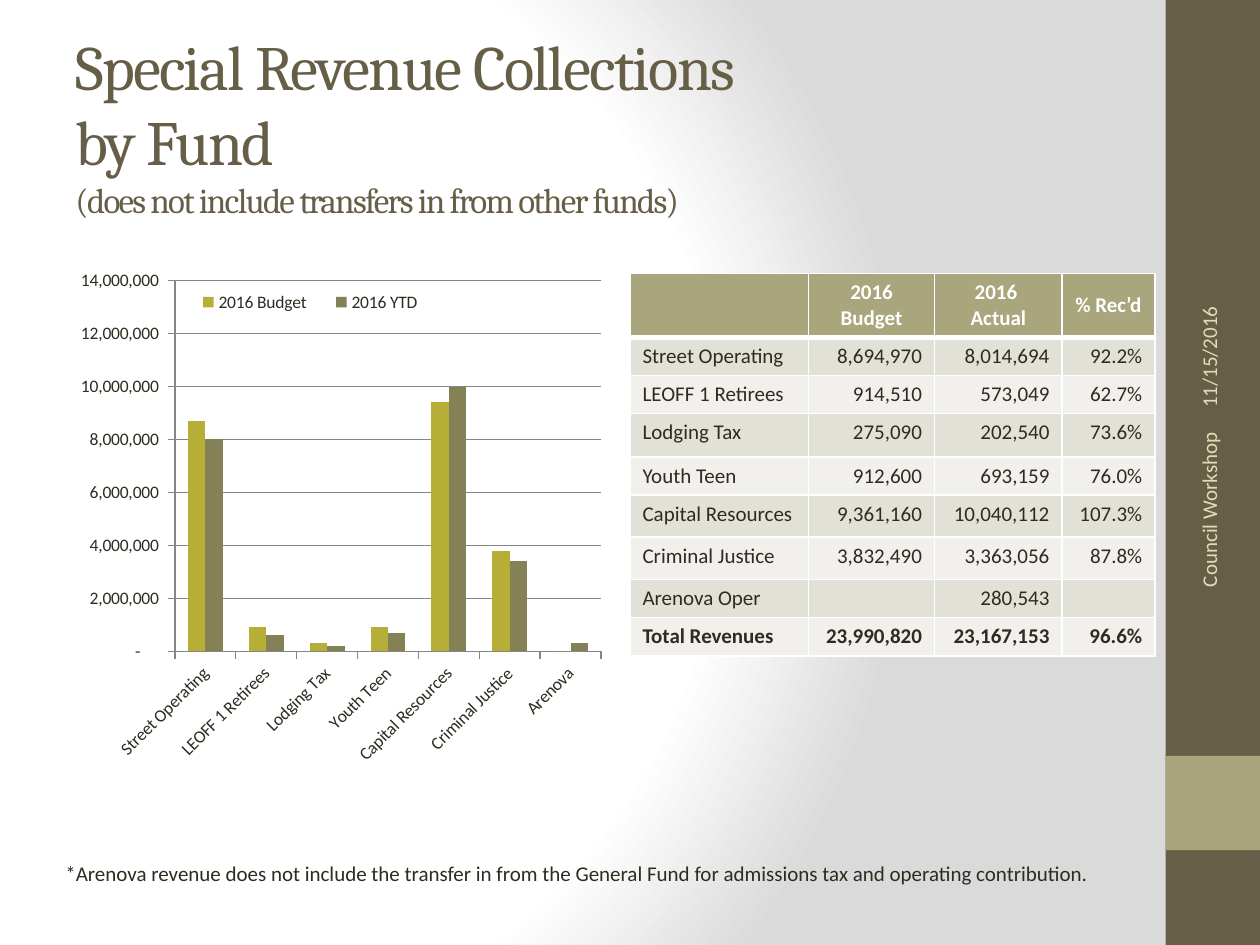
from dataclasses import dataclass

from pptx import Presentation
from pptx.chart.data import CategoryChartData
from pptx.dml.color import RGBColor
from pptx.enum.chart import XL_CHART_TYPE, XL_LEGEND_POSITION, XL_TICK_MARK
from pptx.enum.shapes import MSO_SHAPE
from pptx.enum.text import MSO_ANCHOR, PP_ALIGN
from pptx.oxml import parse_xml
from pptx.oxml.ns import nsdecls
from pptx.util import Cm, Pt

LEFT, CENTER, RIGHT = PP_ALIGN.LEFT, PP_ALIGN.CENTER, PP_ALIGN.RIGHT
TOP, MIDDLE = MSO_ANCHOR.TOP, MSO_ANCHOR.MIDDLE
TICK_OUTSIDE = XL_TICK_MARK.OUTSIDE


@dataclass(frozen=True)
class Theme:
    heading_font: str = "Cambria"
    body_font: str = "Calibri"
    title_size: int = 36
    subtitle_size: int = 20
    body_size: int = 12
    chart_size: int = 10
    brown: str = "675E47"
    olive: str = "A9A57C"
    sand: str = "DFDCB7"
    ink: str = "2F2B20"
    white: str = "FFFFFF"
    gray: str = "DADADA"
    grid: str = "868686"
    bands: tuple = ("E2E1D7", "F1F0EC")
    series: tuple = ("B7AE38", "858157")


THEME = Theme()

TITLE_LINES = [("Special Revenue Collections", THEME.title_size),
               ("by Fund", THEME.title_size),
               ("(does not include transfers in from other funds)", THEME.subtitle_size)]
NOTE = ("*Arenova revenue does not include the transfer in from the General Fund "
        "for admissions tax and operating contribution.")
# text, alignment, left, top, width (cm)
SIDE_LABELS = [("11/15/2016", LEFT, 20.98, 4.57, 6.78),
               ("Council Workshop", RIGHT, 21.08, 11.25, 6.58)]

HEADER = [[], ["2016 Budget"], ["2016 ", "Actual"], ["% Rec’d"]]
# table label, budget, actual, percent received
FUNDS = [
    ("Street Operating", 8694970, 8014694, "92.2%"),
    ("LEOFF 1 Retirees", 914510, 573049, "62.7%"),
    ("Lodging Tax", 275090, 202540, "73.6%"),
    ("Youth Teen", 912600, 693159, "76.0%"),
    ("Capital Resources", 9361160, 10040112, "107.3%"),
    ("Criminal Justice", 3832490, 3363056, "87.8%"),
    ("Arenova Oper", 0, 280543, ""),
]
TOTAL = ("Total Revenues", 23990820, 23167153, "96.6%")
COLUMN_WIDTHS = [3.6, 2.54, 2.57, 1.87]
ROW_HEIGHTS = [1.29, 0.77, 0.77, 0.87, 0.77, 0.85, 0.85, 0.77, 0.77]
SERIES_NAMES = ["2016 Budget", "2016 YTD"]
NUMBER_FORMAT = '_(* #,##0_);_(* \\(#,##0\\);_(* "-"??_);_('


def rgb(color):
    return RGBColor.from_string(color)


def box(left, top, width, height):
    return Cm(left), Cm(top), Cm(width), Cm(height)


def style_font(font, size, color, name=THEME.body_font, bold=False):
    font.size, font.name, font.bold = Pt(size), name, bold
    font.color.rgb = rgb(color)


def add_run(paragraph, text, *style, **options):
    run = paragraph.add_run()
    run.text = text
    style_font(run.font, *style, **options)
    return run


def add_text_box(slide, position, anchor=TOP):
    shape = slide.shapes.add_textbox(*box(*position))
    shape.text_frame.word_wrap = True
    shape.text_frame.vertical_anchor = anchor
    return shape


def set_background(slide):
    stops = "".join(
        f'<a:gs pos="{percent * 1000}"><a:srgbClr val="{color}"/></a:gs>'
        for percent, color in [(0, THEME.white), (75, THEME.white), (100, THEME.gray)])
    slide.element.cSld.insert(0, parse_xml(
        f'<p:bg {nsdecls("p", "a")}><p:bgPr><a:gradFill rotWithShape="1">'
        f'<a:gsLst>{stops}</a:gsLst><a:path path="circle">'
        '<a:fillToRect l="20000" t="50000" r="100000" b="50000"/></a:path>'
        '</a:gradFill><a:effectLst/></p:bgPr></p:bg>'))


def add_sidebar(slide):
    for top, height, color in [(0, 19.05, THEME.brown), (15.24, 1.9, THEME.olive)]:
        shape = slide.shapes.add_shape(MSO_SHAPE.RECTANGLE, *box(23.5, top, 1.9, height))
        shape.shadow.inherit = False
        shape.fill.solid()
        shape.fill.fore_color.rgb = rgb(color)
        shape.line.fill.background()
    for text, alignment, left, top, width in SIDE_LABELS:
        label = add_text_box(slide, (left, top, width, 1.02), MIDDLE)
        label.rotation = 270
        paragraph = label.text_frame.paragraphs[0]
        paragraph.alignment = alignment
        add_run(paragraph, text, THEME.body_size, THEME.sand)


def add_title(slide):
    title = add_text_box(slide, (1.27, 0.76, 21.16, 3.48), MIDDLE)
    paragraph = title.text_frame.paragraphs[0]
    for index, (text, size) in enumerate(TITLE_LINES):
        if index:
            paragraph.add_line_break()
        run = add_run(paragraph, text, size, THEME.brown, name=THEME.heading_font)
        run.font._element.set("spc", "-100")


def fill_cell(cell, lines, color, fill, bold, alignment, bottom_width=1):
    """Write one paragraph per line, then set white borders and the fill."""
    frame = cell.text_frame
    for index, line in enumerate(lines):
        paragraph = frame.add_paragraph() if index else frame.paragraphs[0]
        paragraph.alignment = alignment
        add_run(paragraph, line, THEME.body_size, color, bold=bold)
    if not lines:  # keeps an empty cell from stretching its row
        frame.paragraphs[0]._p.append(parse_xml(
            f'<a:endParaRPr {nsdecls("a")} sz="{THEME.body_size * 100}"/>'))
    properties = cell._tc.get_or_add_tcPr()
    for side, width in [("L", 1), ("R", 1), ("T", 1), ("B", bottom_width)]:
        properties.append(parse_xml(
            f'<a:ln{side} {nsdecls("a")} w="{Pt(width)}"><a:solidFill>'
            f'<a:srgbClr val="{THEME.white}"/></a:solidFill></a:ln{side}>'))
    cell.fill.solid()
    cell.fill.fore_color.rgb = rgb(fill)


def add_fund_table(slide):
    table = slide.shapes.add_table(
        len(ROW_HEIGHTS), len(COLUMN_WIDTHS),
        *box(12.7, 5.51, sum(COLUMN_WIDTHS), sum(ROW_HEIGHTS))).table
    table.first_row = table.horz_banding = False
    for column, width in zip(table.columns, COLUMN_WIDTHS):
        column.width = Cm(width)
    for row, height in zip(table.rows, ROW_HEIGHTS):
        row.height = Cm(height)
    for column, lines in enumerate(HEADER):
        fill_cell(table.cell(0, column), lines, THEME.white, THEME.olive, True, CENTER, 3)
    table.cell(0, len(HEADER) - 1).vertical_anchor = MIDDLE
    for row, record in enumerate(FUNDS + [TOTAL], start=1):
        for column, value in enumerate(record):
            text = f"{value:,}" if value and isinstance(value, int) else value
            fill_cell(table.cell(row, column), [text] if text else [], THEME.ink,
                      THEME.bands[(row - 1) % 2], record is TOTAL,
                      RIGHT if column else LEFT)


def set_layout(parent, x, y, width, height, inner=False):
    """Place a plot area or legend by percentages of the chart."""
    for old in parent.findall(parent.tag.split("}")[0] + "}layout"):
        parent.remove(old)
    target = '<c:layoutTarget val="inner"/>' if inner else ""
    sizes = "".join(f'<c:{key} val="{percent / 100:.3f}"/>' for key, percent in
                    [("x", x), ("y", y), ("w", width), ("h", height)])
    layout = parse_xml(
        f'<c:layout {nsdecls("c")}><c:manualLayout>{target}<c:xMode val="edge"/>'
        f'<c:yMode val="edge"/>{sizes}</c:manualLayout></c:layout>')
    parent.insert(0 if inner else 1, layout)


def add_fund_chart(slide):
    data = CategoryChartData(number_format=NUMBER_FORMAT)
    data.categories = [fund[0].removesuffix(" Oper") for fund in FUNDS]
    for column, name in enumerate(SERIES_NAMES, start=1):
        data.add_series(name, [round(fund[column], -5) for fund in FUNDS])
    chart = slide.shapes.add_chart(
        XL_CHART_TYPE.COLUMN_CLUSTERED, *box(1.47, 5.28, 11, 10.8), data).chart
    style_font(chart.font, THEME.chart_size, THEME.ink)
    chart.has_title = False
    plot = chart.plots[0]
    plot.gap_width, plot.overlap, plot.vary_by_categories = 150, 0, False
    for series, color in zip(plot.series, THEME.series):
        series.format.fill.solid()
        series.format.fill.fore_color.rgb = rgb(color)

    values, categories = chart.value_axis, chart.category_axis
    values.minimum_scale, values.maximum_scale, values.major_unit = 0, 14000000, 2000000
    values.has_major_gridlines = True
    values.tick_labels.number_format = NUMBER_FORMAT
    values.tick_labels.number_format_is_linked = False
    for axis in (values, categories):
        axis.major_tick_mark = TICK_OUTSIDE
        style_font(axis.tick_labels.font, THEME.chart_size, THEME.ink)
    for line in (values.format.line, categories.format.line, values.major_gridlines.format.line):
        line.color.rgb = rgb(THEME.grid)
        line.width = Pt(0.75)
    categories._element.txPr.bodyPr.set("rot", "-2700000")

    chart.has_legend = True
    chart.legend.position = XL_LEGEND_POSITION.BOTTOM
    chart.legend.include_in_layout = False
    set_layout(chart.legend._element, 19.5, 5, 48, 5)
    set_layout(chart._chartSpace.chart.plotArea, 18.7, 3.5, 78.1, 69.2, inner=True)


def main():
    presentation = Presentation()
    presentation.slide_width, presentation.slide_height = Cm(25.4), Cm(19.05)
    slide = presentation.slides.add_slide(presentation.slide_layouts[6])
    set_background(slide)
    add_sidebar(slide)
    add_title(slide)
    add_fund_table(slide)
    note = add_text_box(slide, (1.07, 17.22, 21.59, 0.76))
    add_run(note.text_frame.paragraphs[0], NOTE, THEME.body_size, THEME.ink)
    add_fund_chart(slide)
    presentation.save("out.pptx")


if __name__ == "__main__":
    main()
